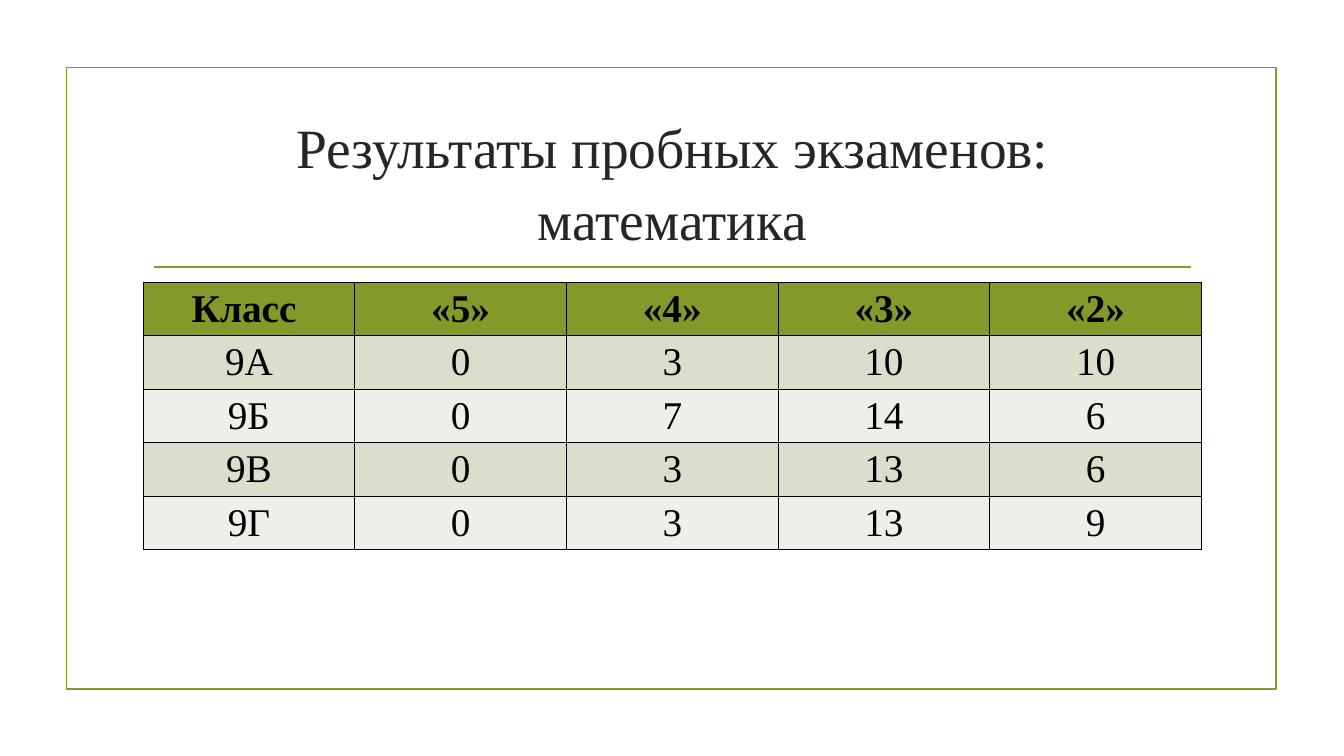
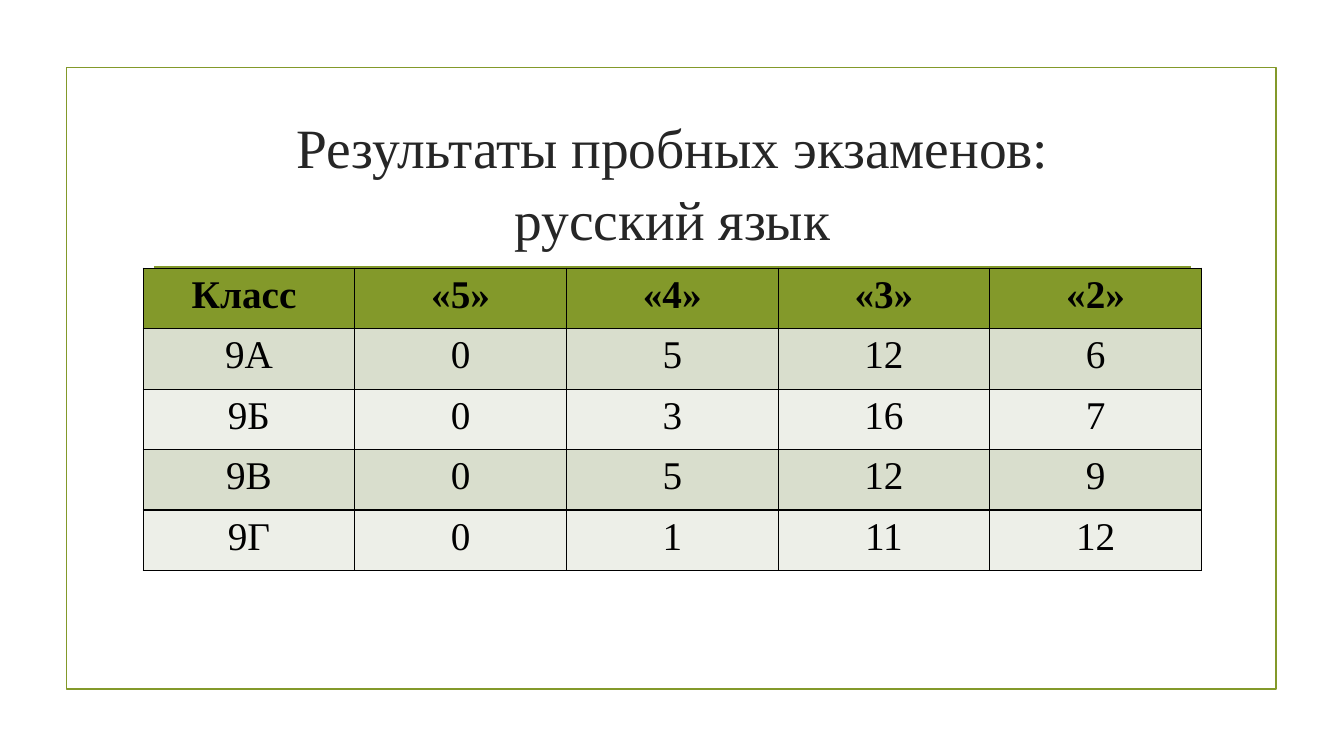
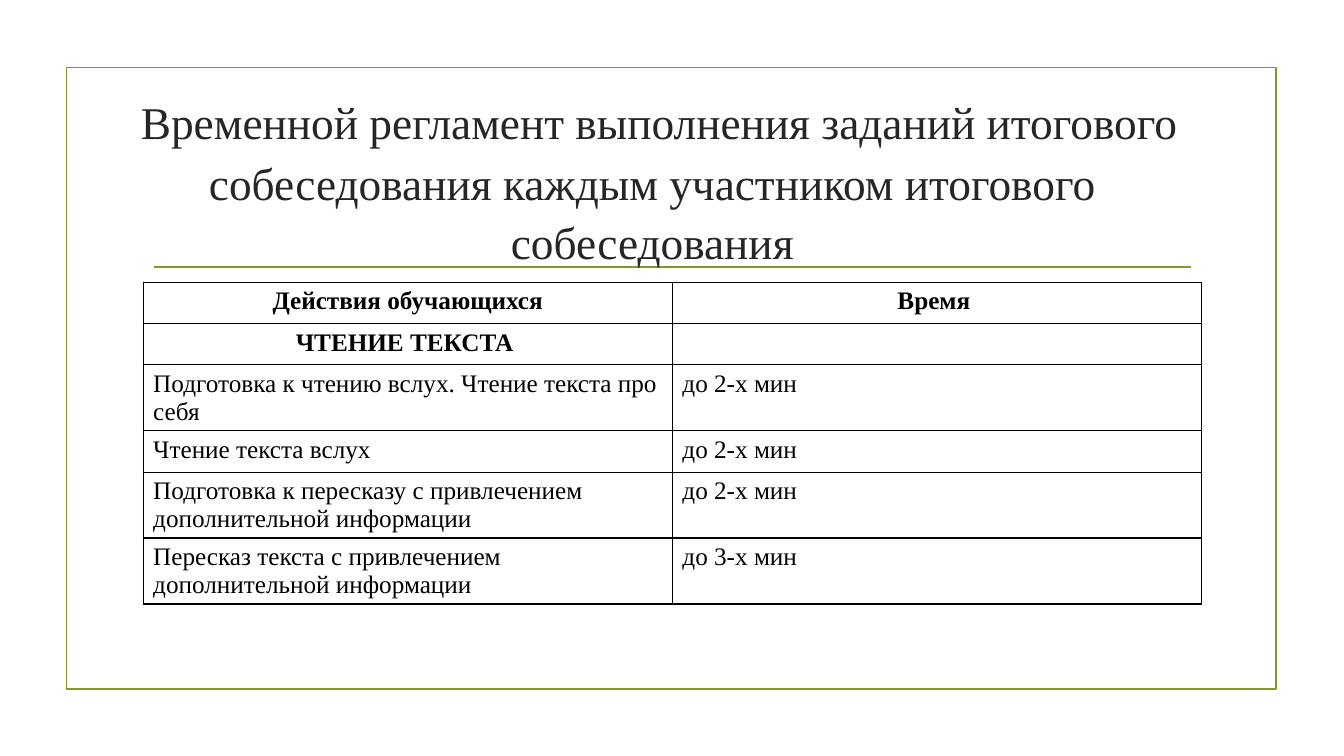
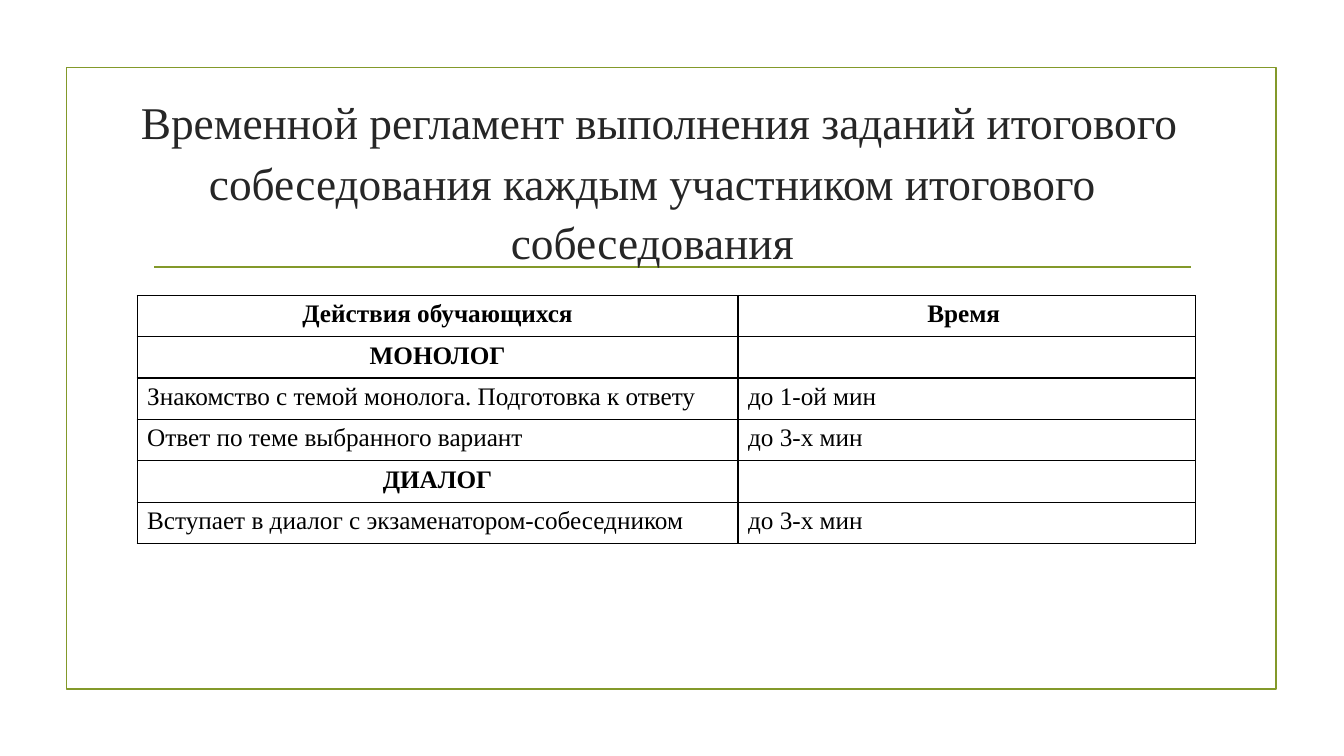
from lxml import etree
from pptx import Presentation
from pptx.dml.color import RGBColor
from pptx.enum.shapes import MSO_CONNECTOR, MSO_SHAPE
from pptx.enum.text import MSO_ANCHOR, MSO_AUTO_SIZE, PP_ALIGN
from pptx.oxml import parse_xml
from pptx.oxml.ns import nsdecls, qn
from pptx.util import Inches, Pt

CENTER, LEFT = PP_ALIGN.CENTER, PP_ALIGN.LEFT
MIDDLE = MSO_ANCHOR.MIDDLE
NO_AUTOFIT = MSO_AUTO_SIZE.NONE
RECTANGLE = MSO_SHAPE.RECTANGLE
STRAIGHT = MSO_CONNECTOR.STRAIGHT
TITLE_ONLY = 5

FONT = "Times New Roman"
COLORS = {
    "olive": "83992A",
    "title": "262626",
    "text": "000000",
    "band_dark": "D9DECD",
    "band_light": "EDEFE8",
}

# Places are percentages of the slide's width and height
FRAME = (4.95, 8.93, 90.02, 82.27)
RULE = (11.48, 88.6, 35.33)
MARKS_TITLE = (10.65, 14.27, 78.77, 19.07)
SCHEDULE_TITLE = (4.43, 13.47, 88.22, 19.07)
MARKS_COLUMNS = [15.75] * 5
SCHEDULE_ROW = 5.47

MARKS_HEADER = ("Класс ", "«5»", "«4»", "«3»", "«2»")
SCHEDULE_HEADER = ("Действия обучающихся", "Время ")
SCHEDULE_HEADING = (
    "Временной регламент выполнения заданий итогового собеседования "
    "каждым участником итогового собеседования"
)

# Subject, table top, row height, marks by class
MARKS = [
    ("математика", 37.33, 7.08, [
        ("9А", 0, 3, 10, 10),
        ("9Б", 0, 7, 14, 6),
        ("9В", 0, 3, 13, 6),
        ("9Г", 0, 3, 13, 9),
    ]),
    ("русский язык", 35.47, 8, [
        ("9А", 0, 5, 12, 6),
        ("9Б", 0, 3, 16, 7),
        ("9В", 0, 5, 12, 9),
        ("9Г", 0, 1, 11, 12),
    ]),
]

# Table left, top, column widths, actions with their time
SCHEDULES = [
    (10.65, 37.33, (39.38, 39.38), [
        ("ЧТЕНИЕ ТЕКСТА ", ""),
        ("Подготовка к чтению вслух. Чтение текста про себя", "до 2-х мин"),
        ("Чтение текста вслух", "до 2-х мин"),
        ("Подготовка к пересказу с привлечением дополнительной информации",
         "до 2-х мин"),
        ("Пересказ текста с привлечением дополнительной информации",
         "до 3-х мин"),
    ]),
    (10.2, 39.07, (44.71, 34.06), [
        ("МОНОЛОГ", ""),
        ("Знакомство с темой монолога. Подготовка к ответу", "до 1-ой мин"),
        ("Ответ по теме выбранного вариант", "до 3-х мин"),
        ("ДИАЛОГ", ""),
        ("Вступает в диалог с экзаменатором-собеседником", "до 3-х мин"),
    ]),
]


def color(name):
    return RGBColor.from_string(COLORS[name])


class Deck:
    def __init__(self):
        self.presentation = Presentation()
        self.presentation.slide_width = Inches(13.33)
        self.presentation.slide_height = Inches(7.5)
        self.layout = self.presentation.slide_layouts[TITLE_ONLY]
        self.slide = None

    def x(self, percent):
        return round(self.presentation.slide_width * percent / 100)

    def y(self, percent):
        return round(self.presentation.slide_height * percent / 100)

    def box(self, left, top, width, height):
        return self.x(left), self.y(top), self.x(width), self.y(height)

    def new_slide(self):
        first = self.slide is None
        self.slide = self.presentation.slides.add_slide(self.layout)
        if first:
            self.decorate_layout()

    def decorate_layout(self):
        """Put the frame and the rule on the layout, in place of its footers."""
        for placeholder in list(self.layout.placeholders):
            if placeholder.placeholder_format.idx != 0:
                self.layout.shapes.element.remove(placeholder.element)

        frame = self.slide.shapes.add_shape(RECTANGLE, *self.box(*FRAME))
        frame.shadow.inherit = False
        frame.fill.background()
        start, end, level = RULE
        rule = self.slide.shapes.add_connector(
            STRAIGHT, self.x(start), self.y(level), self.x(end), self.y(level))
        etree.SubElement(rule.element.spPr, qn("a:effectLst"))

        for shape in (frame, rule):
            shape.line.color.rgb = color("olive")
            shape.line.width = Pt(1.25)
            self.layout.shapes.element.append(shape.element)

    def style(self, paragraph, size, color_name, alignment, bold=False):
        paragraph.alignment = alignment
        font = paragraph.font
        font.name = FONT
        font.size = Pt(size)
        font.bold = bold
        font.color.rgb = color(color_name)

    def title(self, box, text, size=None):
        """Set the title; a smaller size follows a full-size leading space."""
        title = self.slide.shapes.title
        title.left, title.top, title.width, title.height = self.box(*box)
        frame = title.text_frame
        frame.word_wrap = True
        frame.auto_size = NO_AUTOFIT
        frame.vertical_anchor = MIDDLE
        paragraph = frame.paragraphs[0]
        if size:
            paragraph.add_run().text = " "
            run = paragraph.add_run()
            run.text = text
            run.font.size = Pt(size)
        else:
            paragraph.text = text
        paragraph.line_spacing = 1.08
        self.style(paragraph, 39.6, "title", CENTER)

    def table(self, left, top, columns, row_height, rows, size, banded):
        box = self.box(left, top, sum(columns), row_height * len(rows))
        table = self.slide.shapes.add_table(len(rows), len(columns), *box).table
        table.first_row = table.horz_banding = False
        for column, width in zip(table.columns, columns):
            column.width = self.x(width)
        for index, values in enumerate(rows):
            table.rows[index].height = self.y(row_height)
            heading = index == 0 or values[1] == ""
            fill = None
            if banded:
                band = "band_dark" if index % 2 else "band_light"
                fill = "olive" if heading else band
            alignment = CENTER if banded or heading else LEFT
            for cell, value in zip(table.rows[index].cells, values):
                self.cell(cell, fill)
                paragraph = cell.text_frame.paragraphs[0]
                paragraph.text = str(value)
                self.style(paragraph, size, "text", alignment, heading)

    def cell(self, cell, fill):
        # Borders come before the fill in the cell's properties
        properties = cell._tc.get_or_add_tcPr()
        for side in "LRTB":
            properties.append(parse_xml(
                f'<a:ln{side} {nsdecls("a")} w="{Pt(1)}"><a:solidFill>'
                f'<a:srgbClr val="{COLORS["text"]}"/></a:solidFill></a:ln{side}>'))
        if fill:
            cell.fill.solid()
            cell.fill.fore_color.rgb = color(fill)
        else:
            cell.fill.background()


def main():
    deck = Deck()

    # Trial exam results
    for subject, top, row_height, marks in MARKS:
        deck.new_slide()
        deck.title(MARKS_TITLE, f"Результаты пробных экзаменов:\v{subject}")
        deck.table(10.65, top, MARKS_COLUMNS, row_height,
                   [MARKS_HEADER, *marks], size=28, banded=True)

    # Interview schedule
    for left, top, columns, actions in SCHEDULES:
        deck.new_slide()
        deck.title(SCHEDULE_TITLE, SCHEDULE_HEADING, size=32.4)
        deck.table(left, top, columns, SCHEDULE_ROW,
                   [SCHEDULE_HEADER, *actions], size=18, banded=False)

    deck.presentation.save("out.pptx")


if __name__ == "__main__":
    main()
